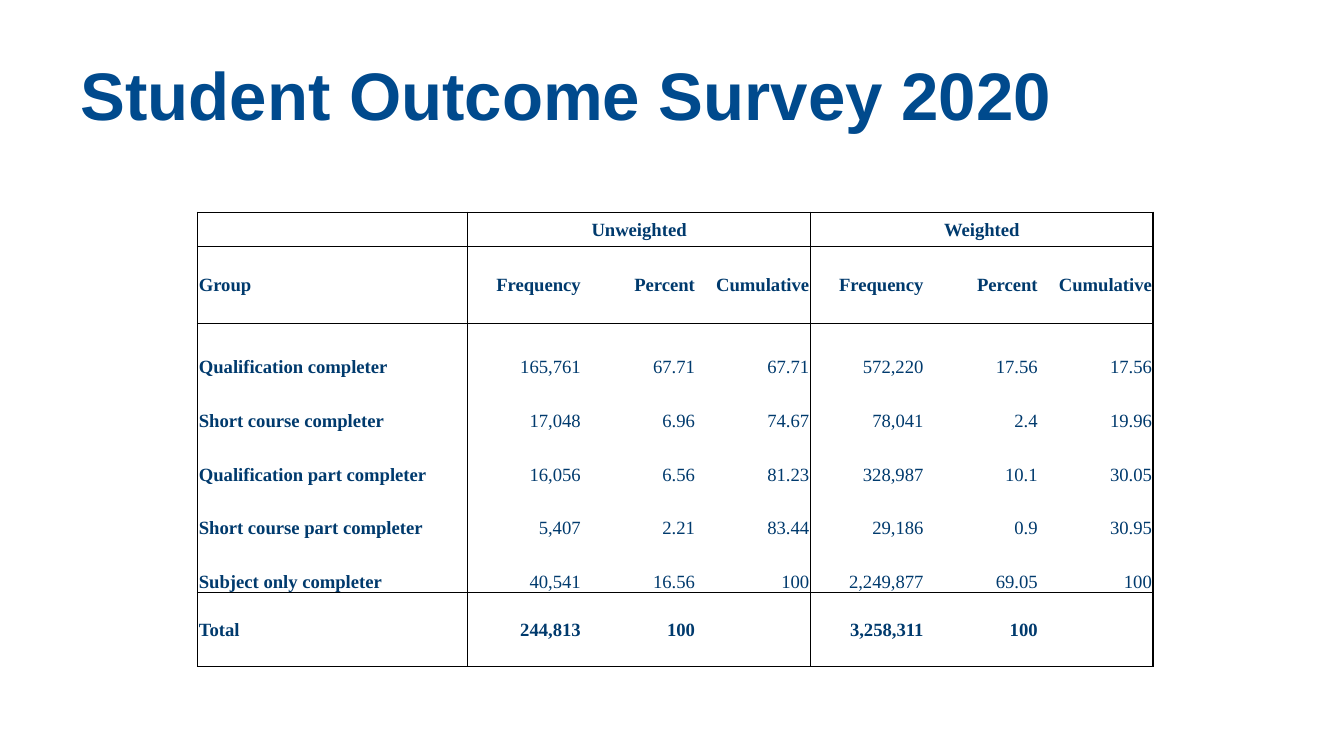
from dataclasses import dataclass
from pptx import Presentation
from pptx.dml.color import RGBColor as Rgb
from pptx.enum.text import MSO_ANCHOR as Anchor, PP_ALIGN as Align
from pptx.oxml.ns import qn
from pptx.util import Inches, Pt
from lxml.etree import SubElement as Sub

WIDE = 10
HIGH = WIDE * 9 / 16
HUES = {"title": "004A8D", "text": "003A6D", "rule": "000000"}
COLS = [2.01] + [0.85] * 6
ROWS = [0.25, 0.58] + [0.4] * 5 + [0.55]
UPS = {0: 1, 1: 0.5, 4: 0.5, 7: 1}
ACROSS = {0: 1, 1: 0.5, 2: 0.5, 7: 0.5, 8: 1}
HEADS = ["Frequency", "Percent", "Cumulative"]


@dataclass
class Row:
    cells: list[str]
    bold: bool = True
    anchor: Anchor = Anchor.MIDDLE


def group(*cells: str) -> Row:
    return Row(list(cells), bold=False, anchor=Anchor.BOTTOM)


DATA = [
    Row(["", "Unweighted", "", "", "Weighted", "", ""]),
    Row(["Group"] + HEADS * 2),
    group("Qualification completer", "165,761", "67.71", "67.71", "572,220", "17.56", "17.56"),
    group("Short course completer", "17,048", "6.96", "74.67", "78,041", "2.4", "19.96"),
    group("Qualification part completer", "16,056", "6.56", "81.23", "328,987", "10.1", "30.05"),
    group("Short course part completer", "5,407", "2.21", "83.44", "29,186", "0.9", "30.95"),
    group("Subject only completer", "40,541", "16.56", "100", "2,249,877", "69.05", "100"),
    Row(["Total", "244,813", "100", "", "3,258,311", "100", ""]),
]


def write(frame, text: str, *, size: int, font: str, hue: str,
          bold: bool, align: Align) -> None:
    par = frame.paragraphs[0]
    par.alignment = align
    if not text:
        Sub(par._p, qn("a:endParaRPr"), sz=str(size * 100))
        return
    run = par.add_run()
    run.text = text
    run.font.size, run.font.name, run.font.bold = Pt(size), font, bold
    run.font.color.rgb = Rgb.from_string(HUES[hue])


def rule(cell, side: str, width: float) -> None:
    line = Sub(cell._tc.get_or_add_tcPr(), qn(f"a:ln{side}"), w=str(Pt(width)))
    if width:
        fill = Sub(line, qn("a:solidFill"))
        Sub(fill, qn("a:srgbClr"), val=HUES["rule"])
    else:
        Sub(line, qn("a:noFill"))


def dress(cell, row: int, col: int, item: Row) -> None:
    span = cell.span_width if cell.is_merge_origin else 1
    cell.margin_left = cell.margin_top = cell.margin_right = Inches(0.01)
    cell.margin_bottom = 0
    cell.vertical_anchor = item.anchor
    rule(cell, "L", UPS.get(col, 0))
    rule(cell, "R", UPS.get(col + span, 0))
    rule(cell, "T", ACROSS.get(row, 0))
    rule(cell, "B", ACROSS.get(row + 1, 0))
    cell.fill.background()
    align = Align.CENTER if row == 0 else Align.RIGHT if col else Align.LEFT
    write(cell.text_frame, item.cells[col], size=10, font="Times New Roman",
          hue="text", bold=item.bold or col == 0, align=align)


def grid(slide) -> None:
    table = slide.shapes.add_table(
        len(ROWS), len(COLS), Inches(1.47), Inches(1.58),
        Inches(sum(COLS)), Inches(sum(ROWS))).table
    table.first_row = table.horz_banding = False
    for part, width in zip(table.columns, COLS):
        part.width = Inches(width)
    for part, height in zip(table.rows, ROWS):
        part.height = Inches(height)
    for col in (1, 4):
        table.cell(0, col).merge(table.cell(0, col + 2))
    for row, item in enumerate(DATA):
        for col in range(len(COLS)):
            dress(table.cell(row, col), row, col, item)


def main() -> None:
    deck = Presentation()
    deck.slide_width, deck.slide_height = Inches(WIDE), Inches(HIGH)
    slide = deck.slides.add_slide(deck.slide_layouts[5])
    title = slide.shapes.title
    title.left, title.top = Inches(0.05 * WIDE), Inches(0.23)
    title.width, title.height = Inches(0.9 * WIDE), Inches(0.94)
    title.text_frame.vertical_anchor = Anchor.MIDDLE
    write(title.text_frame, "Student Outcome Survey 2020", size=36, font="Arial",
          hue="title", bold=True, align=Align.LEFT)
    grid(slide)
    deck.save("out.pptx")


if __name__ == "__main__":
    main()
